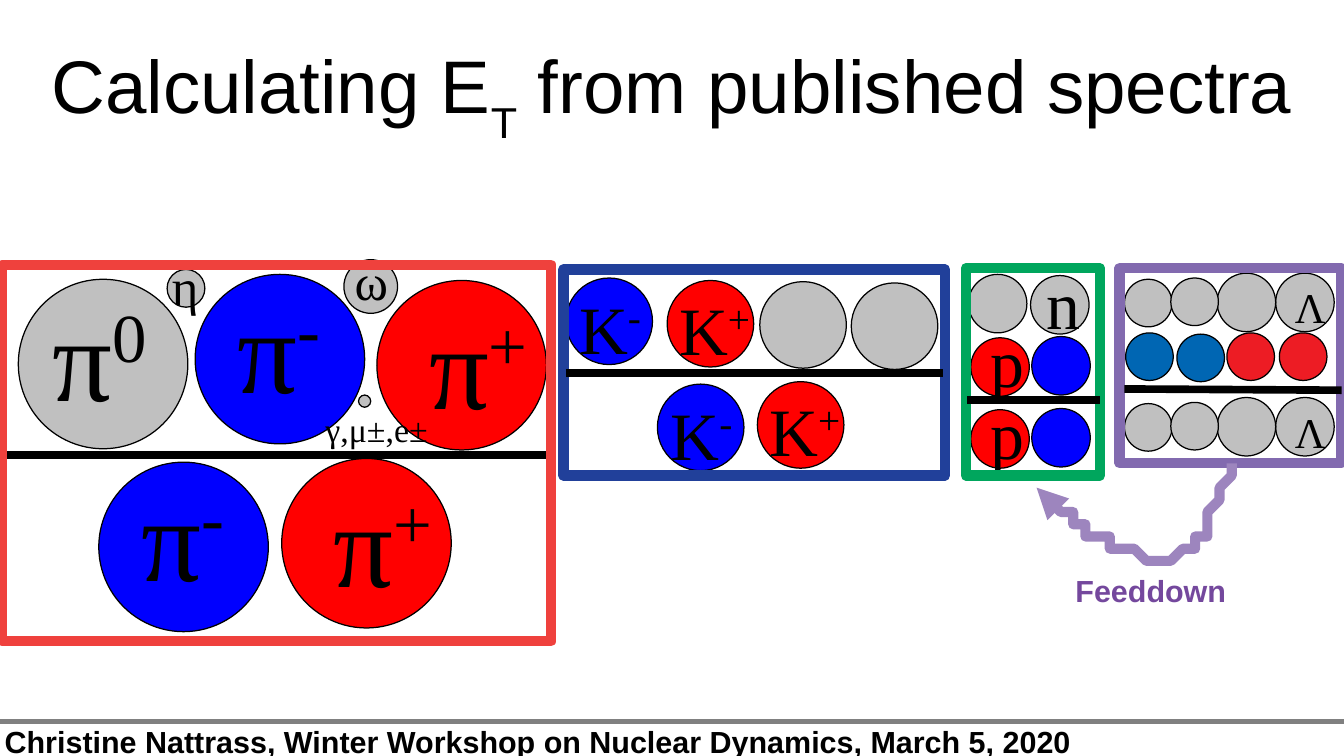
from dataclasses import dataclass

from lxml import etree
from pptx import Presentation
from pptx import util as u
from pptx.dml.color import RGBColor
from pptx.enum import shapes, text
from pptx.oxml.ns import qn

# Grid of square cells, ten to the inch
COLS, ROWS = 110.2, 62
SANS, SERIF = "Arial", "Times New Roman"
COLORS = {
    "black": "000000", "rule": "808080", "neutral": "C0C0C0",
    "positive": "FF0000", "negative": "0000FF",
    "sigma_plus": "ED1C24", "sigma_minus": "0066B3",
    "pions": "EF413D", "kaons": "21409A", "nucleons": "00A65D",
    "hyperons": "826AAF", "arrow": "9D85BE", "feeddown": "74489D",
}


@dataclass
class Label:
    text: str
    size: int
    dx: float
    dy: float
    width: float
    height: float
    sup: str = ""


@dataclass
class Particle:
    diameter: float
    color: str
    label: Label | None = None


@dataclass
class Panel:
    color: str
    frame: tuple[float, float, float, float]
    rule: tuple[float, float, float, float]
    balls: list[tuple[str, float, float]]
    rule_on_top: bool = True


PARTICLES = {
    "pi0": Particle(13.9, "neutral", Label("π", 70, 1.8, -0.2, 14.9, 11.8, "0")),
    "pi+": Particle(13.9, "positive", Label("π", 70, 3.3, 0.4, 11.5, 11.8, "+")),
    "pi-": Particle(13.9, "negative", Label("π", 70, 2.5, -0.4, 11.5, 11.8, "-")),
    "eta": Particle(3.1, "neutral", Label("η", 30, -0.6, -1.7, 4.5, 5.6)),
    "omega": Particle(4.4, "neutral", Label("ω", 30, -0.1, -1.3, 5.5, 5.6)),
    "leptons": Particle(1, "neutral", Label("γ,μ±,e±", 20, -3.7, 0.6, 18.7, 5.1)),
    "K+": Particle(7.1, "positive", Label("K", 40, 0, 0.1, 8.6, 7.1, "+")),
    "K-": Particle(7.1, "negative", Label("K", 40, 0.1, 0.2, 10.8, 7.3, "-")),
    "K0": Particle(7.1, "neutral"),
    "p": Particle(4.8, "positive", Label("p", 40, 0.6, -2, 5.7, 7.1)),
    "n": Particle(4.8, "neutral", Label("n", 40, 0.3, -1.6, 5.7, 7.1)),
    "antiproton": Particle(4.8, "negative"),
    "antineutron": Particle(4.8, "neutral"),
    "lambda": Particle(4.8, "neutral", Label("Λ", 25, 0.6, 0.2, 5.7, 4.8)),
    "antilambda": Particle(4.8, "neutral"),
    "sigma0": Particle(3.9, "neutral"),
    "sigma+": Particle(3.9, "sigma_plus"),
    "sigma-": Particle(3.9, "sigma_minus"),
}

NEUTRAL_HYPERONS = [("lambda", 104.6, 22.4), ("antilambda", 99.8, 22.4),
                    ("sigma0", 92.2, 22.9), ("sigma0", 96, 22.8)]

PANELS = [
    Panel("pions", (0.2, 21.7, 45, 30.9), (0.4, 37.3, 45.4, 37.3), [
        ("pi0", 1.5, 22.9), ("pi+", 30.9, 23), ("pi-", 16, 22.5),
        ("eta", 13.7, 22.1), ("omega", 28.2, 21.3), ("leptons", 29.4, 32.4),
        ("pi+", 23.1, 37.6), ("pi-", 8.1, 37.9)], rule_on_top=False),
    Panel("kaons", (46.2, 22.1, 31.3, 16.9), (46.4, 30.6, 77.3, 30.6), [
        ("K+", 54.7, 23), ("K-", 46.4, 22.8), ("K0", 62.3, 23.1),
        ("K0", 69.8, 23.2), ("K+", 62.1, 31.3), ("K-", 53.9, 31.5)]),
    Panel("nucleons", (79.2, 22, 11, 17), (79.3, 32.8, 90.2, 32.8), [
        ("antineutron", 79.4, 22.5), ("n", 84.5, 22.6),
        ("p", 79.6, 27.7), ("antiproton", 84.6, 27.6),
        ("p", 79.6, 33.6), ("antiproton", 84.6, 33.5)]),
    Panel("hyperons", (91.8, 22, 18.2, 16), (92.2, 31.9, 110, 32), [
        *NEUTRAL_HYPERONS,
        *[(name, col, row + 10.2) for name, col, row in NEUTRAL_HYPERONS],
        ("sigma-", 92.3, 27.3), ("sigma-", 96.5, 27.4),
        ("sigma+", 100.6, 27.3), ("sigma+", 104.9, 27.3)]),
]
FEEDDOWN_CURVE = [(101, 38), (97.5, 50.5), (91.5, 45.5), (85, 40)]


def cells(*values: float) -> list[int]:
    return [u.Inches(v / 10) for v in values]


def rgb(color: str) -> RGBColor:
    return RGBColor.from_string(COLORS[color])


def set_line(sp, color: str, width: float) -> None:
    sp.line.color.rgb = rgb(color)
    sp.line.width = u.Pt(width)


def add_run(p, content: str, color: str = "black", baseline: int = 0, **font) -> None:
    r = p.add_run()
    r.text = content
    for name, value in font.items():
        setattr(r.font, name, value)
    r.font.color.rgb = rgb(color)
    if baseline:
        r.font._element.set("baseline", str(baseline * 1000))


def add_text(s, box: tuple, content: str, size: int, sup: str = "", **font) -> None:
    tf = s.shapes.add_textbox(*cells(*box)).text_frame
    tf.word_wrap = True
    font = {"name": SANS, "size": u.Pt(size), **font}
    add_run(tf.paragraphs[0], content, **font)
    if sup:
        add_run(tf.paragraphs[0], sup, baseline=33, **font)


def add_rule(s, ends: tuple, color: str, width: float) -> None:
    line = s.shapes.add_connector(shapes.MSO_CONNECTOR.STRAIGHT, *cells(*ends))
    set_line(line, color, width)
    etree.SubElement(line._element.spPr, qn("a:effectLst"))


def add_ball(s, name: str, col: float, row: float) -> None:
    kind = PARTICLES[name]
    sp = s.shapes.add_shape(shapes.MSO_SHAPE.OVAL,
                            *cells(col, row, kind.diameter, kind.diameter))
    sp.shadow.inherit = False
    sp.fill.solid()
    sp.fill.fore_color.rgb = rgb(kind.color)
    set_line(sp, "black", 0.75)
    if kind.label:
        b = kind.label
        add_text(s, (col + b.dx, row + b.dy, b.width, b.height),
                 b.text, b.size, b.sup, name=SERIF)


def add_frame(s, panel: Panel) -> None:
    sp = s.shapes.add_shape(shapes.MSO_SHAPE.RECTANGLE, *cells(*panel.frame))
    sp.shadow.inherit = False
    sp.fill.background()
    set_line(sp, panel.color, 6)
    etree.SubElement(sp._element.spPr.find(qn("a:ln")), qn("a:round"))


def add_panel(s, panel: Panel) -> None:
    for ball in panel.balls:
        add_ball(s, *ball)
    if panel.rule_on_top:
        add_frame(s, panel)
    add_rule(s, panel.rule, "black", 4.5)
    if not panel.rule_on_top:
        add_frame(s, panel)


def add_curved_arrow(s, controls: list, steps: int = 30) -> None:
    """Draw a cubic Bezier curve as short segments with a head at its end."""
    points = []
    for i in range(steps + 1):
        t = i / steps
        weights = ((1 - t) ** 3, 3 * t * (1 - t) ** 2, 3 * t * t * (1 - t), t ** 3)
        points.append(tuple(sum(w * c[axis] for w, c in zip(weights, controls))
                            for axis in (0, 1)))
    builder = s.shapes.build_freeform(*points[0], scale=u.Inches(0.1))
    builder.add_line_segments(points[1:], close=False)
    sp = builder.convert_to_shape()
    sp.shadow.inherit = False
    sp.fill.background()
    set_line(sp, "arrow", 6)
    ln = sp._element.spPr.find(qn("a:ln"))
    etree.SubElement(ln, qn("a:round"))
    etree.SubElement(ln, qn("a:tailEnd"), type="triangle")


def set_title(s) -> None:
    title = s.shapes.title
    title.left, title.top, title.width, title.height = cells(0, 0.8, COLS, 13.7)
    tf = title.text_frame
    frame = {"vertical_anchor": text.MSO_ANCHOR.MIDDLE, "word_wrap": True,
             "auto_size": text.MSO_AUTO_SIZE.NONE, "margin_left": 0,
             "margin_right": 0, "margin_top": 0, "margin_bottom": 0}
    for name, value in frame.items():
        setattr(tf, name, value)
    p = tf.paragraphs[0]
    p.alignment = text.PP_ALIGN.CENTER
    for content, baseline in (("Calculating E", 0), ("T", -33),
                              (" from published spectra", 0)):
        add_run(p, content, baseline=baseline, name=SANS, size=u.Pt(44))


def main() -> None:
    prs = Presentation()
    prs.slide_width, prs.slide_height = cells(COLS, ROWS)
    s = prs.slides.add_slide(prs.slide_layouts[5])
    set_title(s)
    add_text(s, (-0.6, 58.8, 92, 3.8),
             "Christine Nattrass, Winter Workshop on Nuclear Dynamics, March 5, 2020",
             18, bold=True)
    add_rule(s, (0, 59.2, COLS, 59.2), "rule", 3)
    for panel in PANELS:
        add_panel(s, panel)
    add_curved_arrow(s, FEEDDOWN_CURVE)
    add_text(s, (87.2, 46.4, 16, 6.6), "Feeddown", 18, color="feeddown", bold=True)
    prs.save("out.pptx")


if __name__ == "__main__":
    main()
